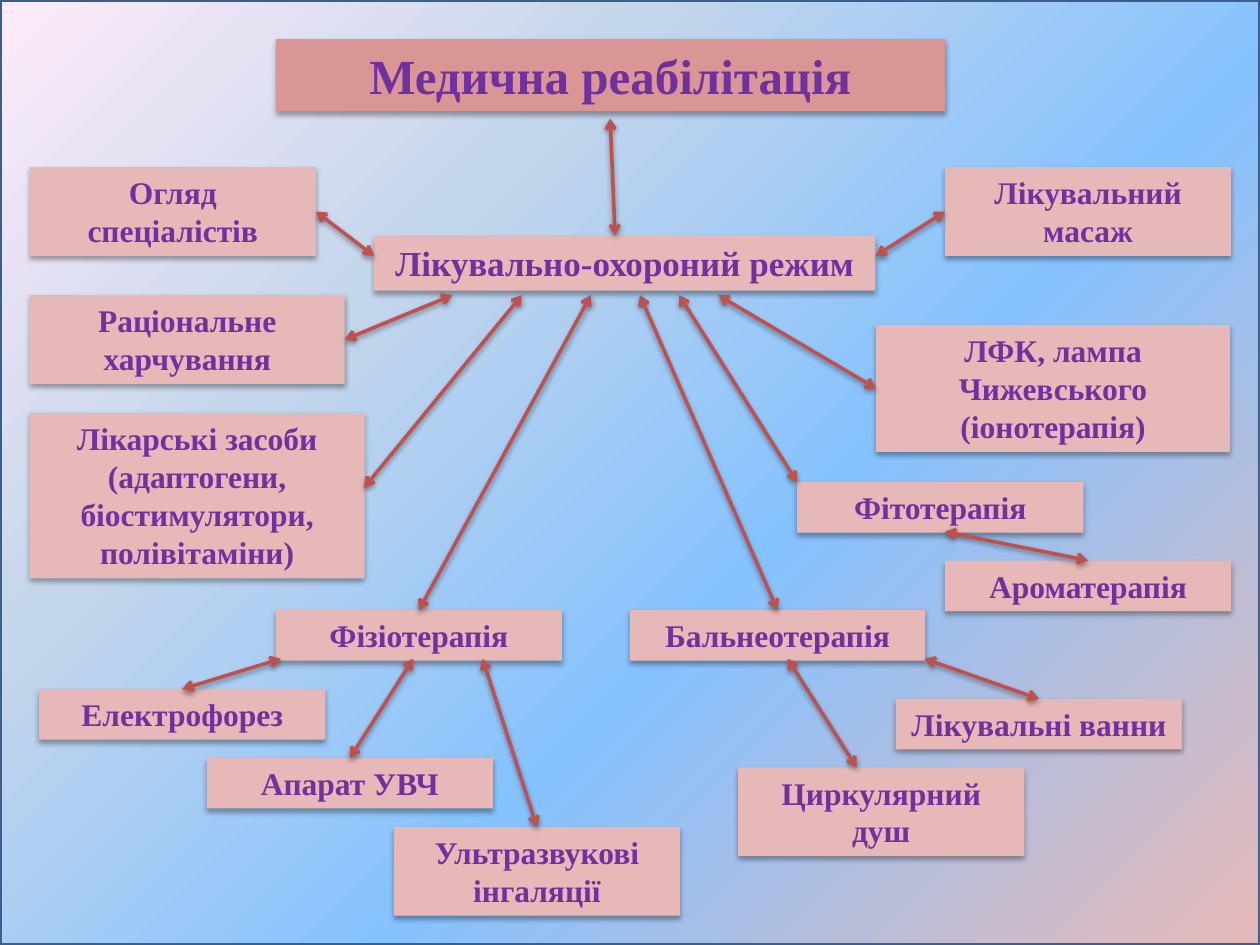
from dataclasses import dataclass

from lxml.etree import SubElement
from pptx import Presentation
from pptx.dml.color import RGBColor
from pptx.enum.shapes import MSO_CONNECTOR, MSO_SHAPE
from pptx.enum.text import MSO_ANCHOR, MSO_AUTO_SIZE, PP_ALIGN
from pptx.oxml.ns import qn
from pptx.util import Cm, Pt


@dataclass(frozen=True)
class Theme:
    font: str = "Times New Roman"
    text: str = "7030A0"
    title_fill: str = "D99694"
    box_fill: str = "E6B9B8"
    arrow: str = "C0504D"
    frame: str = "3A5F8C"
    shadow: str = "000000"
    backdrop: tuple = ((0, "254061"), (0, "E6B9B8"), (40, "85C2FF"),
                       (70, "C4D6EB"), (100, "FFEBFA"))
    title_size: int = 28
    regime_size: int = 20
    size: int = 18
    line_width: int = 2


THEME = Theme()
WIDTH, HEIGHT = 25.4, 19.05
BOX_WIDTH = 5.77
TOP, LEFT, BOTTOM, RIGHT = range(4)

# Headings: key -> (text, left, top, width, height, size, fill), in cm
HEADINGS = {
    "title": ("Медична реабілітація", 5.56, 0.79, 13.49, 1.45,
              THEME.title_size, THEME.title_fill),
    "regime": ("Лікувально-охороний режим", 7.54, 4.75, 10.11, 1.11,
               THEME.regime_size, THEME.box_fill),
}

# Treatments: key -> (text, left, top, width, lines of text)
TREATMENTS = {
    "physio": ("Фізіотерапія", 5.56, 12.3, BOX_WIDTH, 1),
    "balneo": ("Бальнеотерапія", 12.7, 12.3, 5.95, 1),
    "checkup": ("Огляд спеціалістів", 0.6, 3.37, BOX_WIDTH, 2),
    "diet": ("Раціональне харчування", 0.6, 5.95, 6.35, 2),
    "drugs": ("Лікарські засоби\n(адаптогени, біостимулятори, полівітаміни)",
              0.6, 8.33, 6.75, 4),
    "massage": ("Лікувальний масаж", 19.05, 3.37, BOX_WIDTH, 2),
    "exercise": ("ЛФК, лампа Чижевського (іонотерапія)", 17.66, 6.55, 7.14, 3),
    "herbs": ("Фітотерапія", 16.07, 9.72, BOX_WIDTH, 1),
    "aroma": ("Ароматерапія", 19.05, 11.3, BOX_WIDTH, 1),
    "baths": ("Лікувальні ванни", 18.06, 14.09, BOX_WIDTH, 1),
    "shower": ("Циркулярний душ", 14.88, 15.47, BOX_WIDTH, 2),
    "uhf": ("Апарат УВЧ", 4.17, 15.28, BOX_WIDTH, 1),
    "inhalation": ("Ультразвукові інгаляції", 7.94, 16.67, BOX_WIDTH, 2),
    "electro": ("Електрофорез", 0.79, 13.89, BOX_WIDTH, 1),
}

# Arrow ends: a point in cm, or a box and the side whose middle it joins
UNDER_REGIME, UNDER_THERAPY = 5.95, 13.28
ARROWS = [
    ((12.3, 2.39), (12.4, 4.75)),
    ((12.9, UNDER_REGIME), ("balneo", TOP)),
    ((11.91, UNDER_REGIME), ("physio", TOP)),
    ((13.69, UNDER_REGIME), (16.07, 9.72)),
    ((14.48, UNDER_REGIME), ("exercise", LEFT)),
    ((17.65, 5.16), ("massage", LEFT)),
    (("checkup", RIGHT), (7.54, 5.16)),
    ((9.12, UNDER_REGIME), ("diet", RIGHT)),
    ((10.52, UNDER_REGIME), (7.34, 9.83)),
    ((15.88, UNDER_THERAPY), (17.27, 15.47)),
    ((18.64, UNDER_THERAPY), ("baths", TOP)),
    ((19.05, 10.72), ("aroma", TOP)),
    ((9.73, UNDER_THERAPY), ("inhalation", TOP)),
    ((8.33, UNDER_THERAPY), ("uhf", TOP)),
    ((5.66, UNDER_THERAPY), ("electro", TOP)),
]


def rgb(value):
    return RGBColor.from_string(value)


def add_node(parent, tag, **attributes):
    return SubElement(parent, qn(tag), {k: str(v) for k, v in attributes.items()})


def cast_shadow(part, distance, opacity):
    effects = add_node(part._element.spPr, "a:effectLst")
    outer = add_node(effects, "a:outerShdw", blurRad=Pt(3.1), dist=Pt(distance),
                     dir=90 * 60000, rotWithShape=0)
    colour = add_node(outer, "a:srgbClr", val=THEME.shadow)
    add_node(colour, "a:alpha", val=opacity * 1000)


def add_backdrop(slide):
    backdrop = slide.shapes.add_shape(MSO_SHAPE.RECTANGLE, 0, 0, Cm(WIDTH), Cm(HEIGHT))
    backdrop.shadow.inherit = False
    backdrop.line.color.rgb = rgb(THEME.frame)
    backdrop.line.width = Pt(THEME.line_width)
    # Radial gradient spreading from the bottom right corner
    properties = backdrop._element.spPr
    gradient = add_node(properties, "a:gradFill", rotWithShape=1)
    stops = add_node(gradient, "a:gsLst")
    for position, colour in THEME.backdrop:
        stop = add_node(stops, "a:gs", pos=position * 1000)
        add_node(stop, "a:srgbClr", val=colour)
    circle = add_node(gradient, "a:path", path="circle")
    add_node(circle, "a:fillToRect", l=100000, t=100000)
    add_node(gradient, "a:tileRect", r=-100000, b=-100000)
    properties.find(qn("a:ln")).addprevious(gradient)


def add_box(slide, text, left, top, width, height, size, fill):
    box = slide.shapes.add_shape(MSO_SHAPE.RECTANGLE, Cm(left), Cm(top),
                                 Cm(width), Cm(height))
    box.fill.solid()
    box.fill.fore_color.rgb = rgb(fill)
    box.line.fill.background()
    cast_shadow(box, 1.8, 35)
    frame = box.text_frame
    frame.word_wrap = True
    frame.auto_size = MSO_AUTO_SIZE.SHAPE_TO_FIT_TEXT
    frame.vertical_anchor = MSO_ANCHOR.TOP
    frame.text = text
    for paragraph in frame.paragraphs:
        paragraph.alignment = PP_ALIGN.CENTER
        font = paragraph.font
        font.name, font.size, font.bold = THEME.font, Pt(size), True
        font.color.rgb = rgb(THEME.text)
    return box


def add_arrow(slide, boxes, start, end):
    points = [(0, 0) if isinstance(a, str) else (Cm(a), Cm(b)) for a, b in (start, end)]
    arrow = slide.shapes.add_connector(MSO_CONNECTOR.STRAIGHT, *points[0], *points[1])
    for (place, side), join in ((start, arrow.begin_connect), (end, arrow.end_connect)):
        if place in boxes:
            join(boxes[place], side)
    arrow.line.color.rgb = rgb(THEME.arrow)
    arrow.line.width = Pt(THEME.line_width)
    line = arrow._element.spPr.find(qn("a:ln"))
    for tip in ("a:headEnd", "a:tailEnd"):
        add_node(line, tip, type="arrow")
    cast_shadow(arrow, 1.6, 38)


def main():
    deck = Presentation()
    deck.slide_width, deck.slide_height = Cm(WIDTH), Cm(HEIGHT)
    slide = deck.slides.add_slide(deck.slide_layouts[6])
    add_backdrop(slide)

    # Boxes: a treatment's height follows from its number of lines
    boxes = {key: add_box(slide, *heading) for key, heading in HEADINGS.items()}
    for key, (text, left, top, width, lines) in TREATMENTS.items():
        boxes[key] = add_box(slide, text, left, top, width, 0.25 + 0.77 * lines,
                             THEME.size, THEME.box_fill)

    # Arrows between the boxes
    for start, end in ARROWS:
        add_arrow(slide, boxes, start, end)
    deck.save("out.pptx")


if __name__ == "__main__":
    main()
